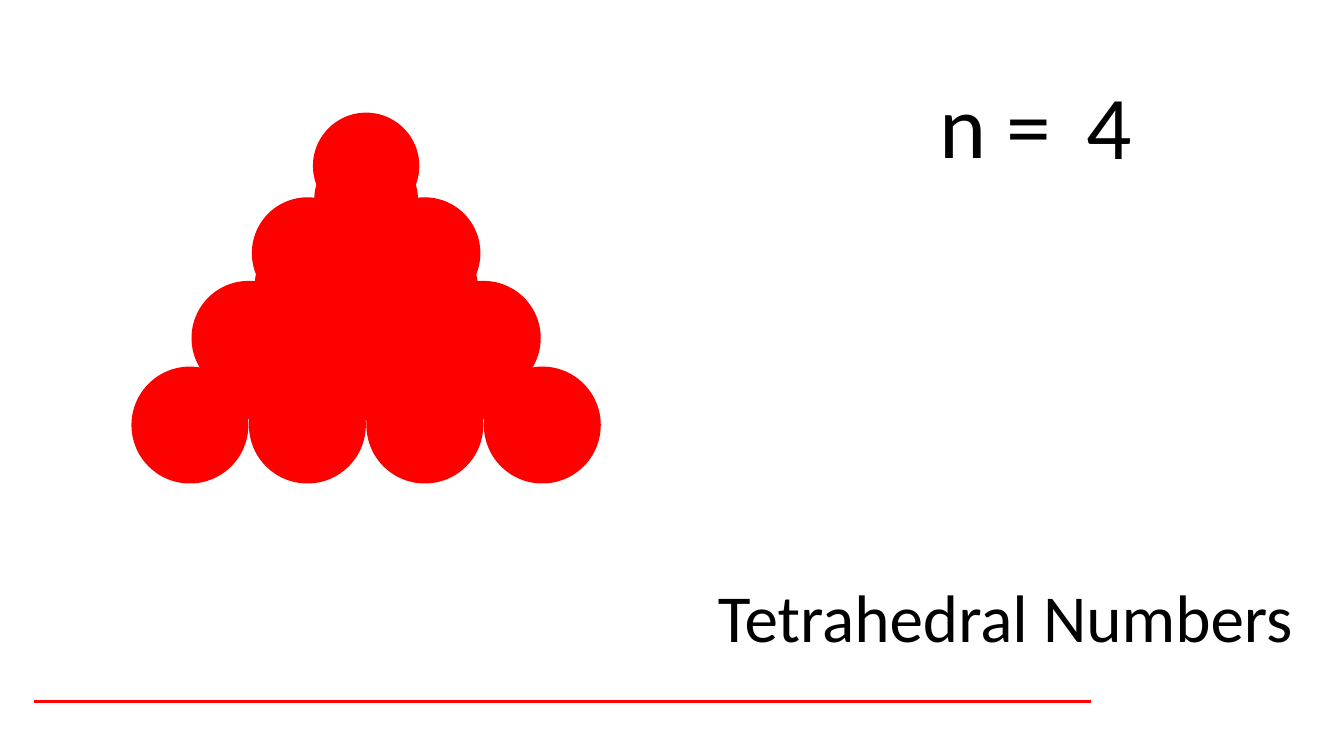
from dataclasses import dataclass

from lxml import etree
from pptx import Presentation
from pptx import util as u
from pptx.dml import color
from pptx.enum import shapes, text
from pptx.oxml import ns

RED = "FF0000"
BALL_RED = "FD0100"
BLACK = "000000"
FONT = "Calibri"
PYRAMID_CENTER = 6.92


@dataclass(frozen=True)
class BallRow:
    count: int
    diameter: float
    top: float
    pitch: float = 0


@dataclass(frozen=True)
class Label:
    words: str
    left: float
    top: float
    width: float
    height: float
    size: int
    align: text.PP_ALIGN = text.PP_ALIGN.LEFT


BALL_ROWS = [
    BallRow(1, 1.6, 4.37),
    BallRow(2, 1.8, 5.16, 1.8),
    BallRow(3, 2.01, 5.94, 2),
    BallRow(1, 1.8, 3.61),
    BallRow(2, 2.01, 4.42, 2.21),
    BallRow(1, 1.96, 2.79),
    BallRow(1, 2.01, 2.13),
    BallRow(2, 2.11, 3.73, 2.21),
    BallRow(3, 2.16, 5.31, 2.22),
    BallRow(4, 2.21, 6.93, 2.22),
]
TITLE = Label("Tetrahedral Numbers", 10.49, 10.74, 14.2, 1.8, 36, text.PP_ALIGN.RIGHT)
COUNTER_LABELS = [
    Label("n =", 17.5, 1.17, 3.2, 2.31, 48),
    Label("4", 20.29, 1.19, 3.2, 2.31, 48),
]


def rgb(value: str) -> color.RGBColor:
    return color.RGBColor.from_string(value)


def write_label(box, label: Label) -> None:
    box.left, box.top = u.Cm(label.left), u.Cm(label.top)
    box.width, box.height = u.Cm(label.width), u.Cm(label.height)
    frame = box.text_frame
    frame.word_wrap = True
    frame.auto_size = text.MSO_AUTO_SIZE.SHAPE_TO_FIT_TEXT
    frame.vertical_anchor = text.MSO_ANCHOR.TOP
    para = frame.paragraphs[0]
    para.alignment = label.align
    span = para.add_run()
    span.text = label.words
    span.font.name = FONT
    span.font.size = u.Pt(label.size)
    span.font.color.rgb = rgb(BLACK)


def draw_ball_row(page, row: BallRow) -> None:
    first_left = PYRAMID_CENTER - ((row.count - 1) * row.pitch + row.diameter) / 2
    for index in reversed(range(row.count)):
        ball = page.shapes.add_shape(
            shapes.MSO_SHAPE.OVAL,
            u.Cm(first_left + index * row.pitch),
            u.Cm(row.top),
            u.Cm(row.diameter),
            u.Cm(row.diameter),
        )
        ball.shadow.inherit = False
        ball.fill.solid()
        ball.fill.fore_color.rgb = rgb(BALL_RED)
        ball.line.fill.background()


def draw_footer_rule(page) -> None:
    rule = page.shapes.add_connector(
        shapes.MSO_CONNECTOR.STRAIGHT, u.Cm(0.64), u.Cm(13.26), u.Cm(20.62), u.Cm(13.26)
    )
    rule.line.color.rgb = rgb(RED)
    rule.line.width = u.Pt(2)
    etree.SubElement(rule._element.spPr, ns.qn("a:effectLst"))


def main() -> None:
    deck = Presentation()
    deck.slide_width, deck.slide_height = u.Cm(25.4), u.Cm(14.29)
    page = deck.slides.add_slide(deck.slide_layouts[5])
    draw_footer_rule(page)
    write_label(page.shapes.title, TITLE)
    for label in COUNTER_LABELS:
        write_label(page.shapes.add_textbox(0, 0, 0, 0), label)
    for row in BALL_ROWS:
        draw_ball_row(page, row)
    deck.save("out.pptx")


if __name__ == "__main__":
    main()
